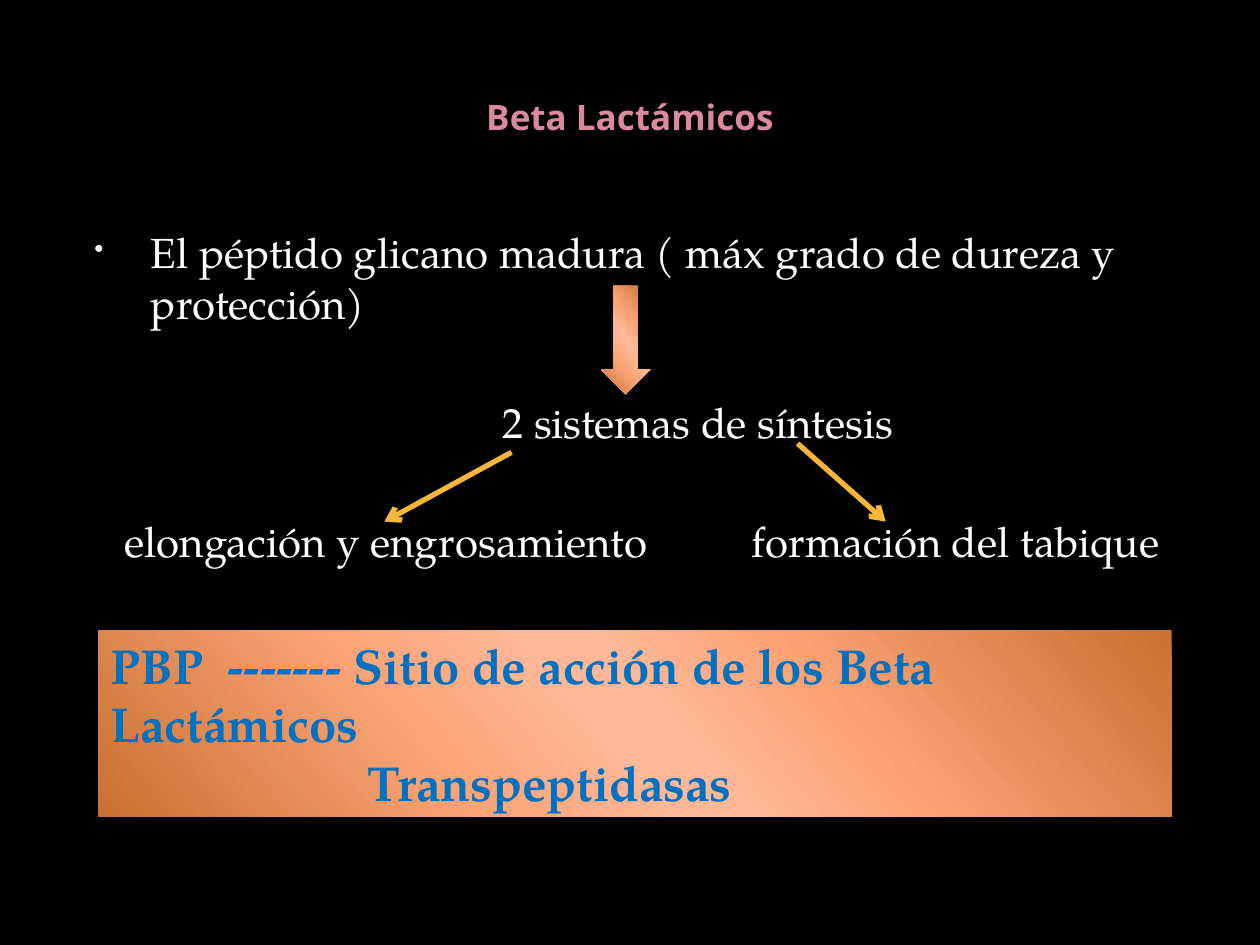
"""Build the slide on beta-lactams and the two systems of wall synthesis."""
from dataclasses import dataclass

from lxml.etree import SubElement
from pptx import Presentation
from pptx.dml.color import RGBColor
from pptx.enum.shapes import MSO_CONNECTOR as Connector, MSO_SHAPE as Preset
from pptx.enum.text import MSO_ANCHOR as Anchor, PP_ALIGN as Align
from pptx.oxml.ns import qn
from pptx.util import Inches, Pt

COLORS = {
    "background": "000000",
    "title": "DB8A9E",
    "body": "FFFFFF",
    "bullet": "F9F9F9",
    "arrow": "F9B639",
    "site": "0070C0",
}
COPPER_STOPS = [(0, "C87131"), (33, "FBA375"), (47, "FFB797"),
                (53, "FFB797"), (68, "FBA477"), (100, "C87131")]
COPPER_ANGLE = 139
TITLE_FONT = "Noto Sans"
BODY_FONT = "TeX Gyre Pagella"


@dataclass
class Box:
    left: float
    top: float
    width: float
    height: float

    def lengths(self) -> list:
        return [Inches(value) for value in (self.left, self.top, self.width, self.height)]


@dataclass
class Statement:
    text: str
    box: Box
    bulleted: bool = False


@dataclass
class Arrow:
    start: tuple[float, float]
    end: tuple[float, float]


STATEMENTS = [
    Statement("El péptido glicano madura ( máx grado de dureza y protección)",
              Box(0.5, 1.75, 9, 0.95), bulleted=True),
    Statement("2 sistemas de síntesis", Box(3.89, 3.1, 3.6, 0.55)),
    Statement("elongación y engrosamiento", Box(0.89, 4.04, 4.6, 0.55)),
    Statement("formación del tabique", Box(5.87, 4.04, 3.6, 0.55)),
]
ARROWS = [Arrow((4.06, 3.59), (3.05, 4.14)), Arrow((6.33, 3.52), (7.03, 4.14))]


def add_run(paragraph, text: str, font_name: str, size: int, color: str, bold: bool = False) -> None:
    run = paragraph.add_run()
    run.text = text
    run.font.name = font_name
    run.font.size = Pt(size)
    run.font.bold = bold
    run.font.color.rgb = RGBColor.from_string(COLORS[color])


def indent(paragraph, margin: float, first_line: float = 0):
    properties = paragraph._p.get_or_add_pPr()
    properties.set("marL", str(Inches(margin)))
    properties.set("indent", str(Inches(first_line)))
    return properties


def add_bullet(paragraph) -> None:
    properties = indent(paragraph, 0.6, -0.45)
    color = SubElement(properties, qn("a:buClr"))
    SubElement(color, qn("a:srgbClr"), val=COLORS["bullet"])
    SubElement(properties, qn("a:buSzPct"), val="65000")
    SubElement(properties, qn("a:buChar"), char="•")


def add_title(slide) -> None:
    title = slide.shapes.title
    title.left, title.top, title.width, title.height = Box(0.5, 0.3, 9, 1.25).lengths()
    title.text_frame.vertical_anchor = Anchor.MIDDLE
    paragraph = title.text_frame.paragraphs[0]
    paragraph.alignment = Align.CENTER
    add_run(paragraph, "Beta Lactámicos", TITLE_FONT, 20, "title", bold=True)


def add_statement(slide, statement: Statement) -> None:
    frame = slide.shapes.add_textbox(*statement.box.lengths()).text_frame
    frame.word_wrap = True
    paragraph = frame.paragraphs[0]
    paragraph.space_before = Pt(4.8)
    if statement.bulleted:
        add_bullet(paragraph)
    add_run(paragraph, statement.text, BODY_FONT, 24, "body")


def add_copper_shape(slide, preset: Preset, box: Box):
    shape = slide.shapes.add_shape(preset, *box.lengths())
    shape.shadow.inherit = False
    shape.line.fill.background()
    shape.fill.gradient()
    gradient = shape._element.spPr.find(qn("a:gradFill"))
    stops = gradient.find(qn("a:gsLst"))
    for stop in list(stops):
        stops.remove(stop)
    for position, color in COPPER_STOPS:
        stop = SubElement(stops, qn("a:gs"), pos=str(position * 1000))
        SubElement(stop, qn("a:srgbClr"), val=color)
    direction = gradient.find(qn("a:lin"))
    direction.set("ang", str(COPPER_ANGLE * 60000))
    direction.set("scaled", "0")
    return shape


def add_arrow(slide, arrow: Arrow) -> None:
    points = [Inches(value) for value in (*arrow.start, *arrow.end)]
    connector = slide.shapes.add_connector(Connector.STRAIGHT, *points)
    connector.line.width = Pt(3)
    connector.line.color.rgb = RGBColor.from_string(COLORS["arrow"])
    SubElement(connector.line._get_or_add_ln(), qn("a:tailEnd"), type="arrow")
    SubElement(connector._element.spPr, qn("a:effectLst"))


def add_action_site(slide) -> None:
    frame = add_copper_shape(slide, Preset.RECTANGLE, Box(0.78, 5, 8.52, 1.48)).text_frame
    frame.word_wrap = True
    frame.vertical_anchor = Anchor.MIDDLE
    site, enzymes = frame.paragraphs[0], frame.add_paragraph()
    site.alignment = enzymes.alignment = Align.LEFT
    indent(enzymes, 2.04)
    add_run(site, "PBP  ------- Sitio de acción de los Beta Lactámicos", BODY_FONT, 28, "site", bold=True)
    add_run(enzymes, "Transpeptidasas", BODY_FONT, 28, "site", bold=True)


def main() -> None:
    presentation = Presentation()
    presentation.slide_width, presentation.slide_height = Inches(10), Inches(7.5)
    slide = presentation.slides.add_slide(presentation.slide_layouts.get_by_name("Title Only"))
    slide.background.fill.solid()
    slide.background.fill.fore_color.rgb = RGBColor.from_string(COLORS["background"])
    add_title(slide)
    for statement in STATEMENTS:
        add_statement(slide, statement)
    add_copper_shape(slide, Preset.DOWN_ARROW, Box(4.77, 2.27, 0.39, 0.86))
    for arrow in ARROWS:
        add_arrow(slide, arrow)
    add_action_site(slide)
    presentation.save("out.pptx")


if __name__ == "__main__":
    main()
